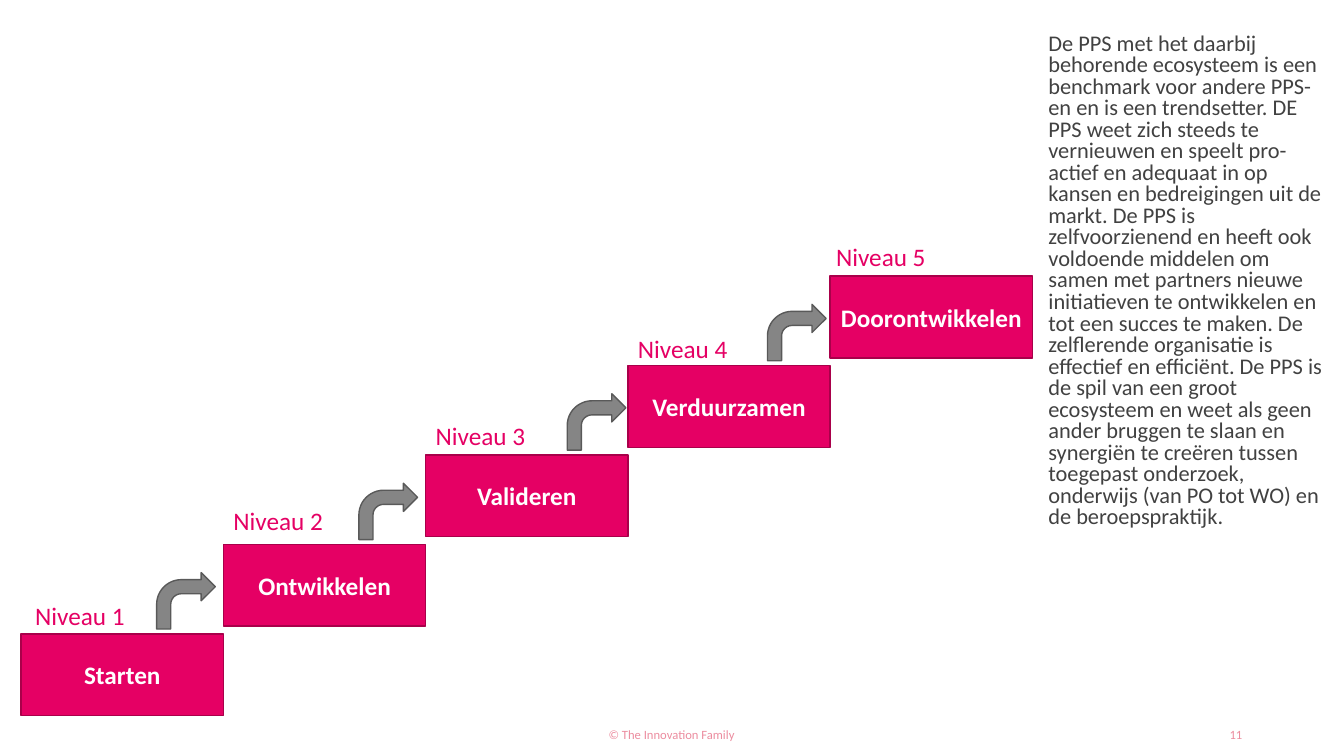
from collections import namedtuple

from pptx import Presentation, util as u
from pptx.dml.color import RGBColor
from pptx.enum import shapes, text

PINK = RGBColor(0xE5, 0x00, 0x64)
DARK_PINK = RGBColor(0xA9, 0x00, 0x4A)
PALE_PINK = RGBColor(0xEC, 0x8C, 0x9F)
GREY = RGBColor(0x85, 0x85, 0x85)
DARK_GREY = RGBColor(0x59, 0x59, 0x59)
INK = RGBColor(0x41, 0x41, 0x41)
WHITE = RGBColor(0xFF, 0xFF, 0xFF)
FONT = "Calibri"
WIDTH, HEIGHT = u.Inches(13.33), u.Inches(7.5)

Box = namedtuple("Box", "left top width height")
Step = namedtuple("Step", "name label_x label_y arrow_x")

# Offsets are shares of one step's width and height.
STEPS = [
    Step("Starten", 0.02, -0.47, 0.67),
    Step("Ontwikkelen", 0, -0.54, 0.67),
    Step("Valideren", 0, -0.48, 0.7),
    Step("Verduurzamen", 0, -0.46, 0.69),
    Step("Doorontwikkelen", -0.02, -0.49, None),
]
DESCRIPTION = (
    "De PPS met het daarbij behorende ecosysteem is een benchmark voor andere "
    "PPS-en en is een trendsetter. DE PPS weet zich steeds te vernieuwen en "
    "speelt pro-actief en adequaat in op kansen en bedreigingen uit de markt. "
    "De PPS is zelfvoorzienend en heeft ook voldoende middelen om samen met "
    "partners nieuwe initiatieven te ontwikkelen en tot een succes te maken. "
    "De zelflerende organisatie is effectief en efficiënt. De PPS is de spil "
    "van een groot ecosysteem en weet als geen ander bruggen te slaan en "
    "synergiën te creëren tussen toegepast onderzoek, onderwijs (van PO tot "
    "WO) en de beroepspraktijk."
)


def inside(box, left, top, width, height):
    """Return the part of a box that the given shares of it describe."""
    return Box(
        int(box.left + left * box.width),
        int(box.top + top * box.height),
        int(width * box.width),
        int(height * box.height),
    )


def write(shape, words, size, colour, align=text.PP_ALIGN.LEFT,
          anchor=text.MSO_ANCHOR.TOP, bold=False):
    frame = shape.text_frame
    frame.word_wrap = True
    frame.vertical_anchor = anchor
    para = frame.paragraphs[0]
    para.alignment = align
    span = para.add_run()
    span.text = words
    span.font.name = FONT
    span.font.size = u.Pt(size)
    span.font.bold = bold
    span.font.color.rgb = colour
    return para


def add_figure(page, kind, box, fill, line):
    figure = page.shapes.add_shape(kind, *box)
    figure.shadow.inherit = False
    figure.fill.solid()
    figure.fill.fore_color.rgb = fill
    figure.line.color.rgb = line
    figure.line.width = u.Pt(1)
    return figure


def add_staircase(page, box):
    """Place equal steps that climb from the lower left to the upper right."""
    step_width = 1 / len(STEPS)
    step_height = 0.186
    rise = (1 - step_height) / (len(STEPS) - 1)
    for index, step in enumerate(STEPS):
        tread = inside(box, index * step_width, 1 - step_height - index * rise,
                       step_width, step_height)
        block = add_figure(page, shapes.MSO_SHAPE.RECTANGLE, tread, PINK, DARK_PINK)
        write(block, step.name, 18, WHITE, text.PP_ALIGN.CENTER,
              text.MSO_ANCHOR.MIDDLE, bold=True)
        label = page.shapes.add_textbox(
            *inside(tread, step.label_x, step.label_y, 0.6, 0.49))
        write(label, f"Niveau {index + 1}", 18, PINK)
        if step.arrow_x is not None:
            add_figure(page, shapes.MSO_SHAPE.BENT_ARROW,
                       inside(tread, step.arrow_x, -0.75, 0.29, 0.69),
                       GREY, DARK_GREY)


def add_description(page, box):
    para = write(page.shapes.add_textbox(*box), DESCRIPTION, 16, INK)
    para.line_spacing = 0.8


def add_footer(page, box):
    middle = text.MSO_ANCHOR.MIDDLE
    credit = page.shapes.add_textbox(*inside(box, 0, 0, 0.56, 1))
    write(credit, "© The Innovation Family", 9, PALE_PINK,
          text.PP_ALIGN.CENTER, middle)
    number = page.shapes.add_textbox(*inside(box, 0.62, 0, 0.38, 1))
    write(number, "11", 9, PALE_PINK, text.PP_ALIGN.RIGHT, middle)


def main():
    deck = Presentation()
    deck.slide_width, deck.slide_height = WIDTH, HEIGHT
    page = deck.slides.add_slide(deck.slide_layouts[6])
    add_footer(page, Box(*map(u.Inches, (4.42, 7.09, 8, 0.4))))
    add_description(page, Box(*map(u.Inches, (10.3, 0.29, 2.93, 5.52))))
    add_staircase(page, Box(*map(u.Inches, (0.21, 2.74, 10.03, 4.36))))
    deck.save("out.pptx")


if __name__ == "__main__":
    main()
